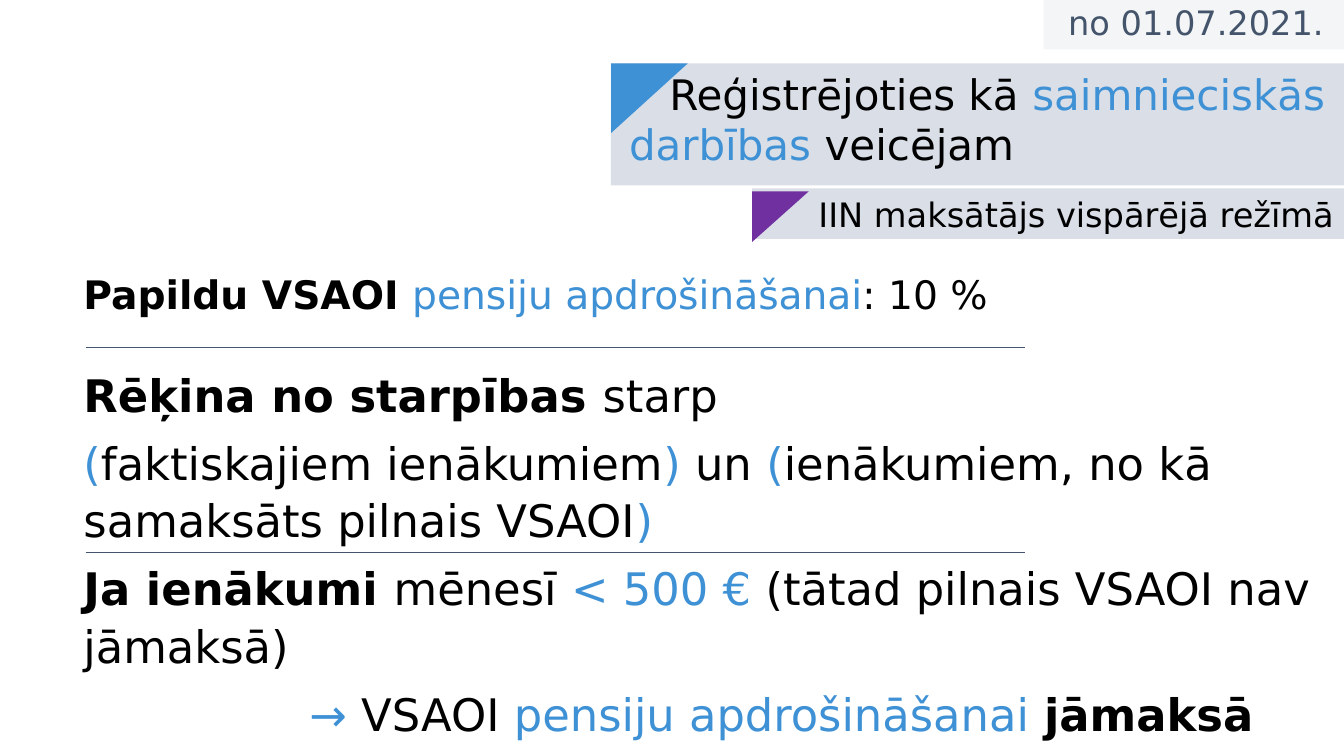
from lxml import etree
from pptx import Presentation
from pptx.dml.color import RGBColor
from pptx.enum.shapes import MSO_CONNECTOR, MSO_SHAPE
from pptx.enum.text import MSO_ANCHOR, PP_ALIGN
from pptx.oxml.ns import qn
from pptx.util import Inches, Pt

RECTANGLE, TRIANGLE = MSO_SHAPE.RECTANGLE, MSO_SHAPE.ISOSCELES_TRIANGLE
STRAIGHT = MSO_CONNECTOR.STRAIGHT
LEFT, RIGHT = PP_ALIGN.LEFT, PP_ALIGN.RIGHT
TOP, MIDDLE = MSO_ANCHOR.TOP, MSO_ANCHOR.MIDDLE

FONT = "DejaVu Sans"
COLORS = {
    "text": "000000",
    "accent": "3F91D5",
    "slate": "44546A",
    "band": "D6DCE5",
    "purple": "7030A0",
}
SLIDE_WIDTH, SLIDE_HEIGHT = 13.33, 7.5

# Each run is (text, color name, bold)
RATE = [
    ("Papildu VSAOI ", "text", True),
    ("pensiju apdrošināšanai", "accent", False),
    (": 10 %", "text", False),
]
RULES = [
    [("Rēķina no starpības ", "text", True), ("starp", "text", False)],
    [
        ("(", "accent", False),
        ("faktiskajiem ienākumiem", "text", False),
        (")", "accent", False),
        (" un ", "text", False),
        ("(", "accent", False),
        ("ienākumiem, no kā samaksāts pilnais VSAOI", "text", False),
        (")", "accent", False),
    ],
    [
        ("Ja ienākumi ", "text", True),
        ("mēnesī ", "text", False),
        ("< 500 € ", "accent", False),
        ("(tātad pilnais VSAOI nav jāmaksā)", "text", False),
    ],
    [
        ("→ ", "accent", False),
        ("VSAOI ", "text", False),
        ("pensiju apdrošināšanai ", "accent", False),
        ("jāmaksā", "text", True),
    ],
]


def rgb(name):
    return RGBColor.from_string(COLORS[name])


def add_filled(slide, kind, box, color, opacity=100):
    shape = slide.shapes.add_shape(kind, *map(Inches, box))
    shape.shadow.inherit = False
    shape.line.fill.background()
    shape.fill.solid()
    shape.fill.fore_color.rgb = rgb(color)
    if opacity < 100:
        srgb = shape.fill._xPr.find(".//" + qn("a:srgbClr"))
        etree.SubElement(srgb, qn("a:alpha")).set("val", str(opacity * 1000))
    return shape


def add_corner(slide, left, top, width, height, color):
    """Right triangle whose square corner is at the top left."""
    shift = (width - height) / 2
    box = (left + shift, top - shift, height, width)
    corner = add_filled(slide, TRIANGLE, box, color)
    corner.adjustments[0] = 0
    corner.rotation = 90


def write(frame, paragraphs, size, align=LEFT, anchor=TOP, spacing=1.0):
    frame.word_wrap = True
    frame.vertical_anchor = anchor
    for index, runs in enumerate(paragraphs):
        paragraph = frame.add_paragraph() if index else frame.paragraphs[0]
        paragraph.alignment = align
        paragraph.line_spacing = spacing
        if index:
            paragraph.space_before = Pt(7.5)
        for text, color, bold in runs:
            run = paragraph.add_run()
            run.text = text
            run.font.name = FONT
            run.font.size = Pt(size)
            run.font.bold = bold
            run.font.color.rgb = rgb(color)


def add_text(slide, box, paragraphs, size, **layout):
    frame = slide.shapes.add_textbox(*map(Inches, box)).text_frame
    write(frame, paragraphs, size, **layout)
    return frame


def indent(paragraph, margin=0, first_line=0):
    properties = paragraph._p.get_or_add_pPr()
    properties.set("marL", str(Inches(margin)))
    properties.set("indent", str(Inches(first_line)))


def add_divider(slide, left, top, width):
    divider = slide.shapes.add_connector(
        STRAIGHT, Inches(left), Inches(top), Inches(left + width), Inches(top))
    divider.line.color.rgb = rgb("slate")
    divider.line.width = Pt(0.5)
    etree.SubElement(divider._element.spPr, qn("a:effectLst"))


def add_date(slide, left, top, width, height):
    date = add_filled(slide, RECTANGLE, (left, top, width, height), "band", 28)
    write(date.text_frame, [[("no 01.07.2021.", "slate", False)]], 24,
          align=RIGHT, anchor=MIDDLE, spacing=0.9)
    date.text_frame.margin_right = Inches(0.2)


def add_title(slide, left, top, width, height):
    add_filled(slide, RECTANGLE, (left, top, width, height), "band", 92)
    title = [
        ("Reģistrējoties kā ", "text", False),
        ("saimnieciskās darbības ", "accent", False),
        ("veicējam", "text", False),
    ]
    frame = add_text(slide, (left + 0.08, top, width - 0.08, 1.11), [title], 30)
    indent(frame.paragraphs[0], first_line=0.4)
    add_corner(slide, left, top, 0.76, 0.69, "accent")


def add_subtitle(slide, left, top, width, height):
    add_filled(slide, RECTANGLE, (left, top, width, height), "band", 92)
    add_text(slide, (left - 0.8, top, width + 0.8, height),
             [[("IIN maksātājs vispārējā režīmā", "text", False)]], 24, align=RIGHT)
    add_corner(slide, left, top + 0.03, 0.56, 0.5, "purple")


def add_body(slide, left, top, width, height):
    add_text(slide, (left, top, width, 0.7), [RATE], 28, spacing=0.9)
    rules_top = top + 0.87
    frame = add_text(slide, (left, rules_top, width, height - 0.87), RULES, 32, spacing=1.07)
    indent(frame.paragraphs[-1], margin=2.24)
    for offset in (0.76, 2.79):
        add_divider(slide, left + 0.12, top + offset, 9.32)


def main():
    presentation = Presentation()
    presentation.slide_width = Inches(SLIDE_WIDTH)
    presentation.slide_height = Inches(SLIDE_HEIGHT)
    slide = presentation.slides.add_slide(presentation.slide_layouts[6])
    add_subtitle(slide, 7.46, 1.87, 5.87, 0.5)
    add_title(slide, 6.06, 0.63, 7.27, 1.21)
    add_date(slide, 10.35, 0, 2.98, 0.49)
    add_body(slide, 0.73, 2.69, 12.6, 4.72)
    presentation.save("out.pptx")


if __name__ == "__main__":
    main()
